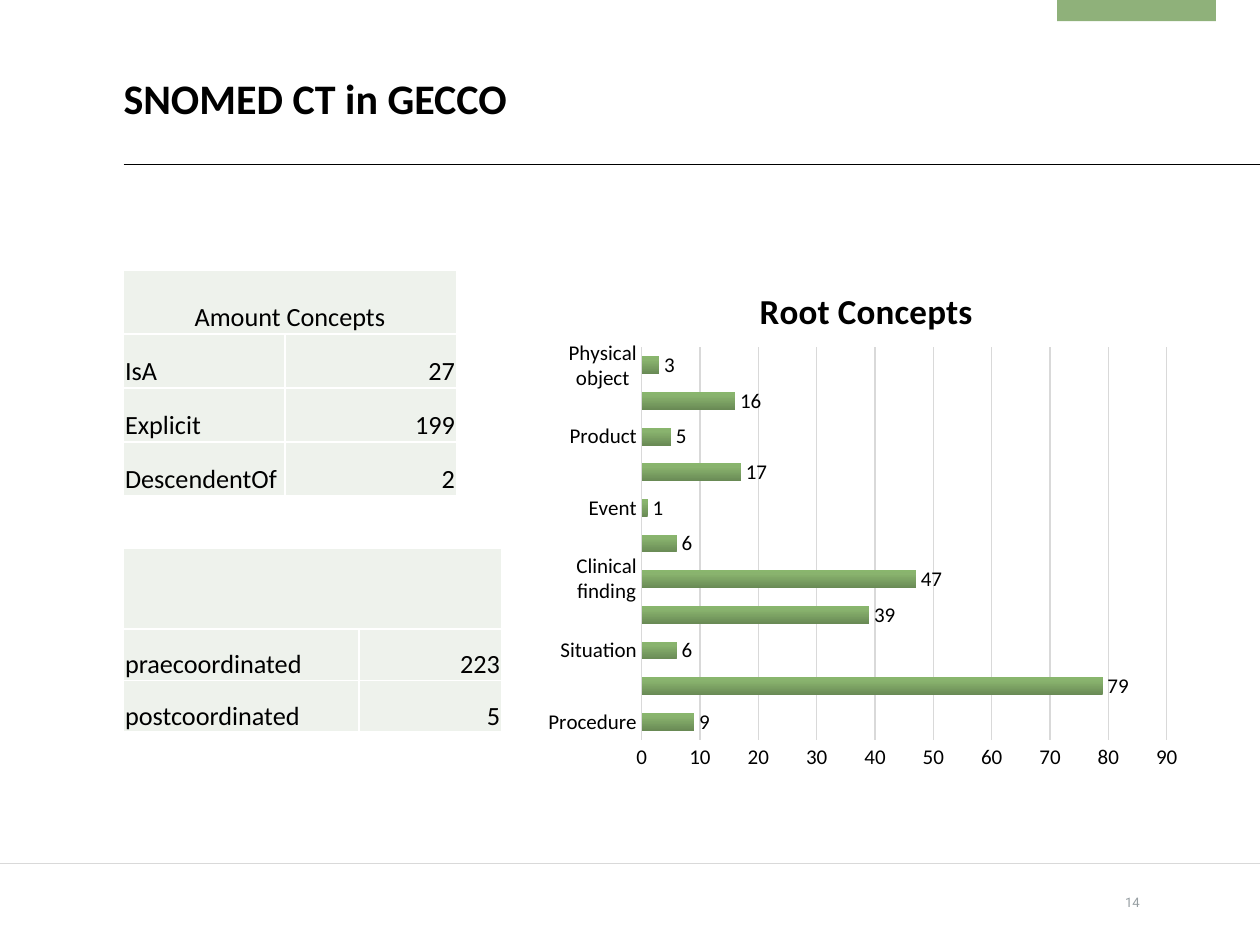
from copy import deepcopy

from pptx import Presentation
from pptx import util as u
from pptx.chart.data import CategoryChartData
from pptx.dml.color import RGBColor
from pptx.enum import chart as charts, shapes, text
from pptx.oxml import parse_xml
from pptx.oxml.ns import nsdecls, qn

BLACK = RGBColor(0x00, 0x00, 0x00)
GREEN = RGBColor(0x8F, 0xB1, 0x7A)
PALE_GREEN = RGBColor(0xEE, 0xF2, 0xEC)
LIGHT_GREY = RGBColor(0xD9, 0xD9, 0xD9)
NUMBER_GREY = RGBColor(0x96, 0x9E, 0xA2)
BAR_GRADIENT = [(0, RGBColor(0x69, 0x8A, 0x55)),
                (0.8, RGBColor(0x89, 0xB3, 0x6E)),
                (1, RGBColor(0x89, 0xB6, 0x6D))]
LEFT = 2.49

ROOT_CONCEPTS = {
    "Procedure": 9, "Disorder": 79, "Situation": 6, "Qualifier value": 39,
    "Clinical finding": 47, "Social concept": 6, "Event": 1,
    "Body structure": 17, "Product": 5,
    "Pharmaceutical / biologic produc": 16, "Physical object": 3,
}


def manual_layout(inner=False, **fractions):
    target = '<c:layoutTarget val="inner"/>' if inner else ""
    modes = '<c:xMode val="edge"/><c:yMode val="edge"/>'
    values = "".join(f'<c:{key} val="{value}"/>' for key, value in fractions.items())
    return parse_xml(f'<c:layout {nsdecls("c")}><c:manualLayout>{target}{modes}'
                     f'{values}</c:manualLayout></c:layout>')


class SlideBuilder:
    font_name = "Calibri"

    def __init__(self, slide):
        self.slide = slide

    def style(self, font, size, color=BLACK, bold=False, name=None):
        font.name = name or self.font_name
        font.size = u.Pt(size)
        font.bold = bold
        font.color.rgb = color

    def add_words(self, frame, words, size, align=text.PP_ALIGN.LEFT, **look):
        paragraph = frame.paragraphs[0]
        paragraph.alignment = align
        run = paragraph.add_run()
        run.text = words
        self.style(run.font, size, **look)

    def fit_frame(self, frame):
        frame.word_wrap = True
        frame.auto_size = text.MSO_AUTO_SIZE.NONE
        frame.margin_left = frame.margin_right = frame.margin_bottom = 0
        frame.margin_top = u.Cm(0.1)

    def title(self, words, left, top, width, height):
        shape = self.slide.shapes.title
        shape.left, shape.top = u.Cm(left), u.Cm(top)
        shape.width, shape.height = u.Cm(width), u.Cm(height)
        self.fit_frame(shape.text_frame)
        shape.text_frame.vertical_anchor = text.MSO_ANCHOR.MIDDLE
        self.add_words(shape.text_frame, words, 24, bold=True)

    def label(self, words, left, top, width, height, size, **look):
        shape = self.slide.shapes.add_textbox(*map(u.Cm, (left, top, width, height)))
        self.fit_frame(shape.text_frame)
        self.add_words(shape.text_frame, words, size, **look)

    def block(self, left, top, width, height, color):
        shape = self.slide.shapes.add_shape(
            shapes.MSO_SHAPE.RECTANGLE, *map(u.Cm, (left, top, width, height)))
        shape.shadow.inherit = False
        shape.fill.solid()
        shape.fill.fore_color.rgb = color
        shape.line.fill.background()

    def rule(self, start, end, y, color):
        line = self.slide.shapes.add_connector(
            shapes.MSO_CONNECTOR.STRAIGHT, *map(u.Cm, (start, y, end, y)))
        line.line.color.rgb = color
        line.line.width = u.Pt(0.5)
        line._element.spPr.append(parse_xml(f'<a:effectLst {nsdecls("a")}/>'))

    def cell_look(self, cell):
        properties = cell._tc.get_or_add_tcPr()
        for side in ("lnL", "lnR", "lnT", "lnB"):
            properties.append(parse_xml(
                f'<a:{side} {nsdecls("a")} w="12700"><a:solidFill>'
                f'<a:srgbClr val="FFFFFF"/></a:solidFill></a:{side}>'))
        cell.fill.solid()
        cell.fill.fore_color.rgb = PALE_GREEN
        cell.vertical_anchor = text.MSO_ANCHOR.BOTTOM
        cell.margin_left = cell.margin_right = cell.margin_top = u.Cm(0.03)
        cell.margin_bottom = 0

    def table(self, heading, rows, top, widths, heading_height, row_height):
        height = heading_height + row_height * len(rows)
        frame = self.slide.shapes.add_table(
            len(rows) + 1, len(widths),
            *map(u.Cm, (LEFT, top, sum(widths), height)))
        table = frame.table
        table.first_row = table.horz_banding = False
        for column, width in zip(table.columns, widths):
            column.width = u.Cm(width)
        for index, row in enumerate(table.rows):
            row.height = u.Cm(row_height if index else heading_height)
        for cell in table.iter_cells():
            self.cell_look(cell)
        # Heading spans both columns
        table.cell(0, 0).merge(table.cell(0, 1))
        if heading:
            self.add_words(table.cell(0, 0).text_frame, heading, 15,
                           text.PP_ALIGN.CENTER)
        for index, (name, amount) in enumerate(rows, 1):
            self.add_words(table.cell(index, 0).text_frame, name, 15)
            self.add_words(table.cell(index, 1).text_frame, str(amount), 15,
                           text.PP_ALIGN.RIGHT)

    def axis(self, axis):
        axis.major_tick_mark = axis.minor_tick_mark = charts.XL_TICK_MARK.NONE
        self.style(axis.tick_labels.font, 12)

    def bar_chart(self, title, values, left, top, width, height):
        data = CategoryChartData()
        data.categories = list(values)
        data.add_series("Series 1", list(values.values()))
        chart = self.slide.shapes.add_chart(
            charts.XL_CHART_TYPE.BAR_CLUSTERED,
            *map(u.Cm, (left, top, width, height)), data).chart
        self.style(chart.font, 10)
        chart.has_legend = False

        # Chart title and plot area
        self.add_words(chart.chart_title.text_frame, title, 20,
                       text.PP_ALIGN.CENTER, bold=True)
        title_element = chart.chart_title._element
        plot_area = chart._chartSpace.chart.plotArea
        for parent, layout, place in (
                (title_element, manual_layout(x=0.33, y=0.05), 1),
                (plot_area, manual_layout(True, x=0.16, y=0.18, w=0.8, h=0.75), 0)):
            for old in parent.findall(qn("c:layout")):
                parent.remove(old)
            parent.insert(place, layout)

        # Axes
        category_axis, value_axis = chart.category_axis, chart.value_axis
        self.axis(category_axis)
        category_axis.format.line.color.rgb = LIGHT_GREY
        category_axis.format.line.width = u.Pt(0.75)
        self.axis(value_axis)
        value_axis.minimum_scale, value_axis.maximum_scale = 0, 90
        value_axis.major_unit = 10
        value_axis.format.line.fill.background()
        grid = value_axis.major_gridlines.format.line
        grid.color.rgb = LIGHT_GREY
        grid.width = u.Pt(0.75)

        # Bars with a gradient and value labels
        plot = chart.plots[0]
        plot.gap_width = 100
        plot.vary_by_categories = False
        series = plot.series[0]
        fill = series.format.fill
        fill.gradient()
        fill.gradient_angle = 90
        stops = series._element.find(".//" + qn("a:gsLst"))
        stops.append(deepcopy(stops[-1]))
        for stop, (position, color) in zip(fill.gradient_stops, BAR_GRADIENT):
            stop.position = position
            stop.color.rgb = color
        labels = series.data_labels
        labels.show_value = True
        labels.position = charts.XL_LABEL_POSITION.OUTSIDE_END
        self.style(labels.font, 12)


def main():
    presentation = Presentation()
    presentation.slide_width, presentation.slide_height = u.Cm(25.4), u.Cm(19.05)
    builder = SlideBuilder(presentation.slides.add_slide(presentation.slide_layouts[5]))

    # Page frame
    builder.block(21.31, 0, 3.2, 0.43, GREEN)
    builder.rule(LEFT, 25.4, 3.32, BLACK)
    builder.rule(0, 25.4, 17.4, LIGHT_GREY)
    builder.title("SNOMED CT in GECCO", LEFT, 1.32, 18.21, 1.19)
    builder.label("14", 22.68, 17.93, 1.83, 0.66, 7.5, color=NUMBER_GREY, name="Roboto")

    # Chart and tables
    builder.bar_chart("Root Concepts", ROOT_CONCEPTS, 10.82, 5.11, 13.23, 10.54)
    builder.table("Amount Concepts",
                  [("IsA", 27), ("Explicit", 199), ("DescendentOf", 2)],
                  5.45, (3.26, 3.45), 1.28, 1.09)
    builder.table("", [("praecoordinated", 223), ("postcoordinated", 5)],
                  11.05, (4.75, 2.87), 1.63, 1.04)

    presentation.save("out.pptx")


if __name__ == "__main__":
    main()
